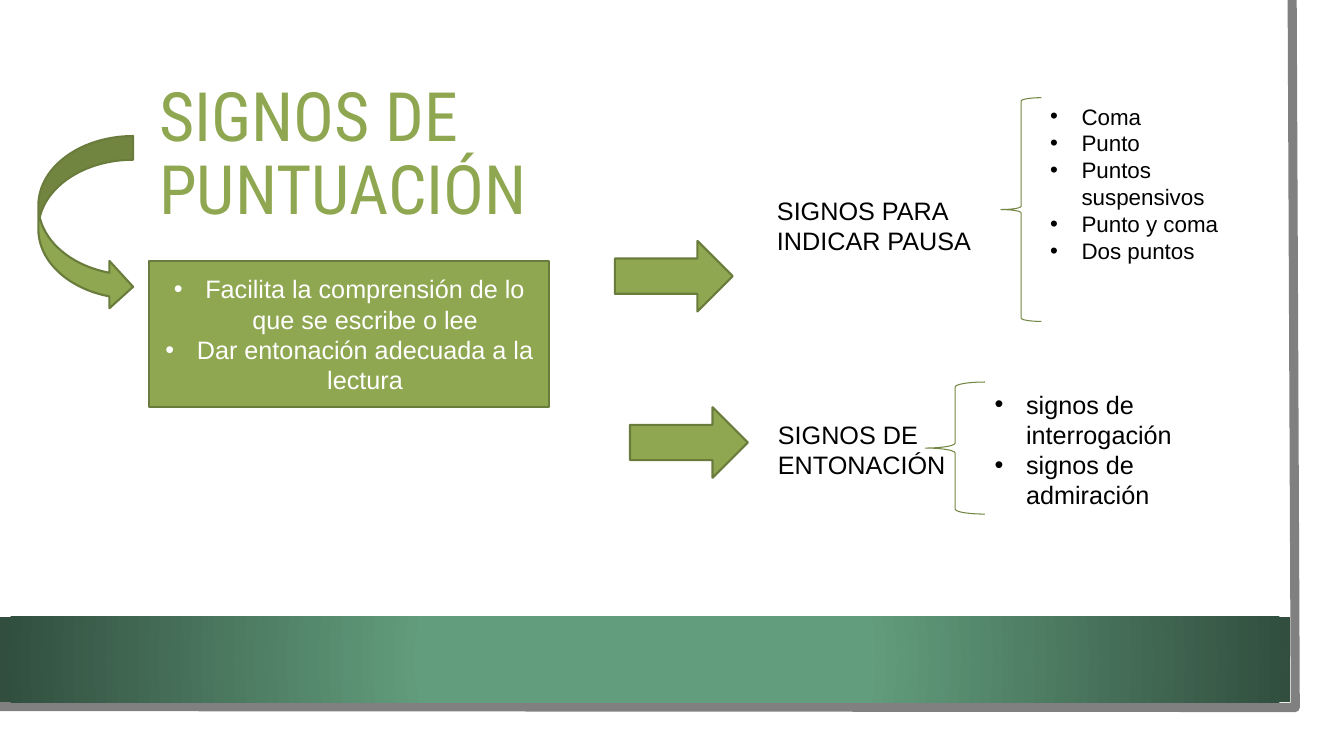
import pptx
import pptx.util
import pptx.dml.color
import pptx.enum.shapes
import pptx.enum.text
import pptx.oxml
import pptx.oxml.ns
import lxml.etree

Pt = pptx.util.Pt
MSO = pptx.enum.shapes.MSO_SHAPE
ANCHOR = pptx.enum.text.MSO_ANCHOR
ALIGN = pptx.enum.text.PP_ALIGN
FIT = pptx.enum.text.MSO_AUTO_SIZE

SLIDE_SIZE = (960, 540)
COLORS = {
    "paper": "FFFFFF", "ink": "000000", "frame": "808080",
    "band": "629D7D", "band_edge": "314E3E",
    "olive": "8FA751", "olive_line": "6A7C3C", "brace": "738641",
}
PANEL = (0, 0, 943.2, 523.4)
FRAME_POINTS = [(923, 0), (925.2, 505.4), (-2.2, 504.7)]
FRAME_WIDTH = 6.5
BAND = (0, 440.6, 921.6, 61.2)

TITLE = ("SIGNOS DE PUNTUACIÓN", (106.6, 54, 293, 114.5))
PURPOSE = (["Facilita la comprensión de lo que se escribe o lee",
            "Dar entonación adecuada a la lectura"], (106.6, 186.5, 285.8, 104.4))
ARROWS = [
    (MSO.RIGHT_ARROW, (439.2, 172.1, 84.2, 50.4)),
    (MSO.RIGHT_ARROW, (450, 290.9, 84.2, 50.4)),
    (MSO.CURVED_RIGHT_ARROW, (27.4, 97.2, 67.7, 124.6)),
]
GROUPS = [
    {"label": "SIGNOS PARA INDICAR PAUSA", "label_at": (547.9, 136.1, 195.8, 72.7),
     "signs": ["Coma", "Punto", "Puntos suspensivos", "Punto y coma", "Dos puntos"],
     "signs_at": (743, 69.8, 134.6, 126), "size": 16,
     "brace_at": (715, 69.8, 28.8, 159.8)},
    {"label": "SIGNOS DE ENTONACIÓN", "label_at": (548.6, 295.9, 166.3, 51.1),
     "signs": ["signos de interrogación", "signos de admiración"],
     "signs_at": (703.4, 274.3, 151.2, 94.3), "size": 18,
     "brace_at": (661, 272.9, 42.5, 94.3)},
]
TITLE_FORMAT = {"size": Pt(48.6), "name": "Roboto Condensed"}
BODY_FORMAT = {"size": Pt(18), "name": "Arial"}
INDENT = 22.5


def rgb(name):
    """Return a palette colour."""
    return pptx.dml.color.RGBColor.from_string(COLORS[name])


def apply(target, values):
    """Set each attribute of a target from a dict."""
    for key, value in values.items():
        setattr(target, key, value)


def style(shape, fill=None, line=None, width=0):
    """Give a shape its fill and outline."""
    shape.shadow.inherit = False
    if fill:
        shape.fill.solid()
        shape.fill.fore_color.rgb = rgb(fill)
    else:
        shape.fill.background()
    if line:
        shape.line.color.rgb = rgb(line)
        shape.line.width = Pt(width)
    else:
        shape.line.fill.background()


def add_shape(slide, kind, at, **look):
    """Add a styled preset shape."""
    shape = slide.shapes.add_shape(kind, *map(Pt, at))
    style(shape, **look)
    return shape


def write(shape, lines, color, font, frame, paragraph_format, bullets=False):
    """Write paragraphs into a shape."""
    text = shape.text_frame
    apply(text, {"word_wrap": True, **frame})
    for number, line in enumerate(lines):
        paragraph = text.add_paragraph() if number else text.paragraphs[0]
        apply(paragraph, paragraph_format)
        if bullets:
            properties = paragraph._p.get_or_add_pPr()
            properties.set("marL", str(Pt(INDENT)))
            properties.set("indent", str(-Pt(INDENT)))
            for tag, key, value in (("a:buFont", "typeface", "Arial"), ("a:buChar", "char", "•")):
                lxml.etree.SubElement(properties, pptx.oxml.ns.qn(tag)).set(key, value)
        run = paragraph.add_run()
        run.text = line
        apply(run.font, font)
        run.font.color.rgb = rgb(color)


def add_text(slide, lines, at, **text):
    """Add a text box."""
    write(slide.shapes.add_textbox(*map(Pt, at)), lines, **text)


def add_backdrop(slide):
    """Draw the panel, its frame and the gradient band."""
    add_shape(slide, MSO.RECTANGLE, PANEL, fill="paper")
    start, *rest = [(Pt(x), Pt(y)) for x, y in FRAME_POINTS]
    builder = slide.shapes.build_freeform(*start)
    builder.add_line_segments(rest, close=False)
    style(builder.convert_to_shape(), line="frame", width=FRAME_WIDTH)

    band = add_shape(slide, MSO.RECTANGLE, BAND)
    band.fill.gradient()
    for stop, position, name in zip(band.fill.gradient_stops, (0.34, 1), ("band", "band_edge")):
        stop.position = position
        stop.color.rgb = rgb(name)
    gradient = band._element.spPr.find(pptx.oxml.ns.qn("a:gradFill"))
    gradient.replace(gradient.find(pptx.oxml.ns.qn("a:lin")), pptx.oxml.parse_xml(
        f'<a:path {pptx.oxml.ns.nsdecls("a")} path="circle">'
        '<a:fillToRect l="50000" t="50000" r="50000" b="50000"/></a:path>'))


def main():
    """Build the punctuation slide."""
    deck = pptx.Presentation()
    apply(deck, dict(zip(("slide_width", "slide_height"), map(Pt, SLIDE_SIZE))))
    slide = deck.slides.add_slide(deck.slide_layouts[6])
    add_backdrop(slide)

    middle = {"vertical_anchor": ANCHOR.MIDDLE}
    title, title_at = TITLE
    add_text(slide, [title], title_at, color="olive", font=TITLE_FORMAT,
             frame=middle, paragraph_format={"line_spacing": 0.9})

    olive = {"fill": "olive", "line": "olive_line", "width": 1.5}
    purposes, purpose_at = PURPOSE
    write(add_shape(slide, MSO.RECTANGLE, purpose_at, **olive), purposes, "paper",
          BODY_FORMAT, middle, {"alignment": ALIGN.CENTER}, bullets=True)
    for kind, at in ARROWS:
        add_shape(slide, kind, at, **olive)

    body = {"color": "ink", "frame": {"auto_size": FIT.SHAPE_TO_FIT_TEXT},
            "paragraph_format": {"alignment": ALIGN.LEFT}}
    for group in GROUPS:
        add_text(slide, [group["label"]], group["label_at"], font=BODY_FORMAT, **body)
        add_text(slide, group["signs"], group["signs_at"], bullets=True,
                 font={**BODY_FORMAT, "size": Pt(group["size"])}, **body)
        add_shape(slide, MSO.LEFT_BRACE, group["brace_at"], line="brace", width=0.75)
    deck.save("out.pptx")


if __name__ == "__main__":
    main()
